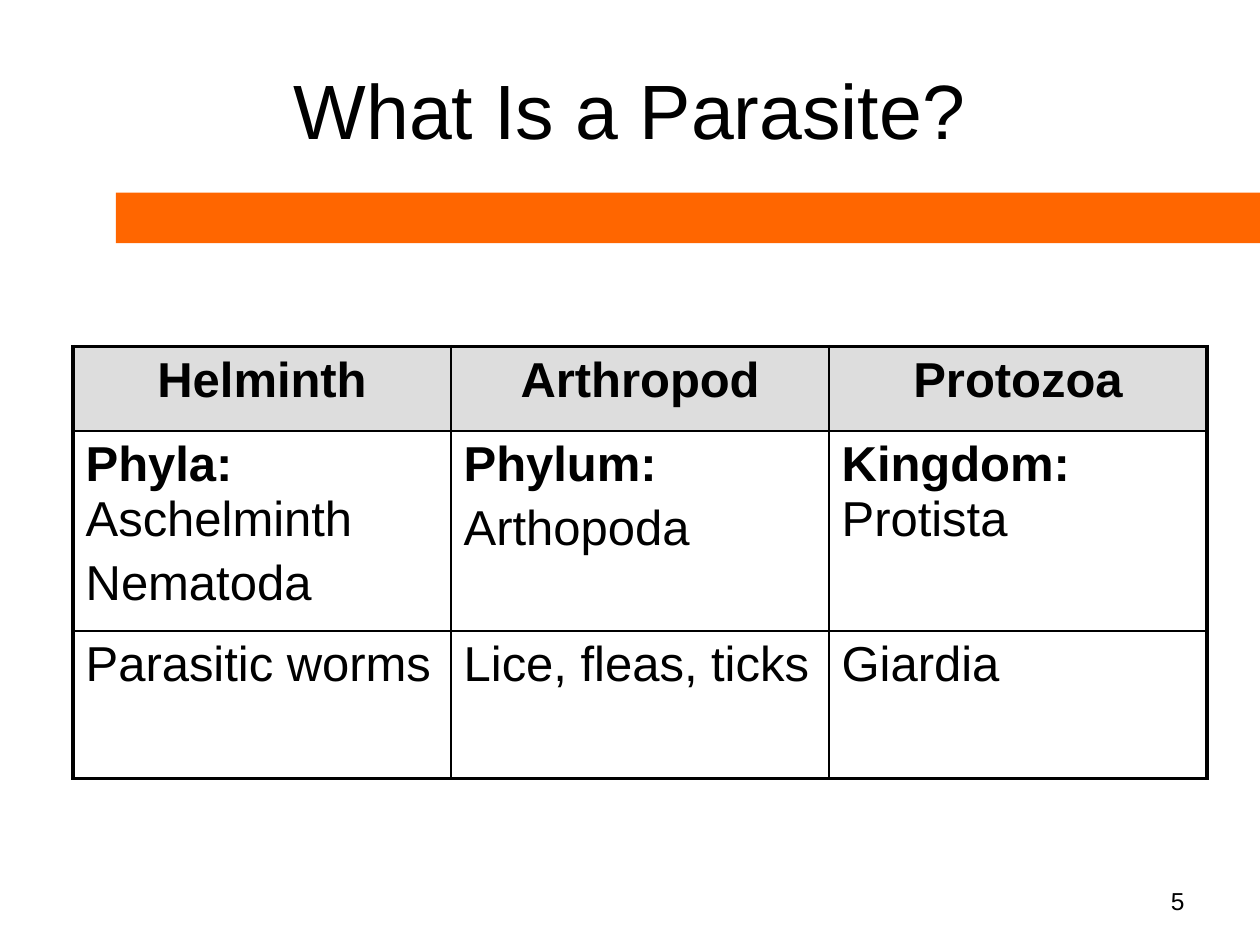
from dataclasses import dataclass

from lxml.etree import SubElement
from pptx import Presentation
from pptx.dml.color import RGBColor
from pptx.enum.shapes import MSO_SHAPE as Shape
from pptx.enum.text import MSO_ANCHOR as Anchor, PP_ALIGN as Align
from pptx.oxml.ns import qn
from pptx.util import Inches, Pt


@dataclass(frozen=True)
class Theme:
    font: str = "Arial"
    ink: str = "000000"
    accent: str = "FF6600"
    header_fill: str = "DDDDDD"
    title_size: int = 44
    table_size: int = 28
    number_size: int = 14
    outer_line: float = 2.25
    inner_line: float = 1


THEME = Theme()
COLUMN_WIDTH = 3
ROW_HEIGHTS = [0.67, 1.59, 1.17]

# Each cell is a list of paragraphs; each paragraph is a list of (text, bold) runs.
ROWS = [
    [[[(name, True)]] for name in ("Helminth", "Arthropod", "Protozoa")],
    [
        [[("Phyla:", True), (" Aschelminth", False)], [("Nematoda", False)]],
        [[("Phylum:", True)], [("Arthopoda", False)]],
        [[("Kingdom:", True), (" Protista", False)]],
    ],
    [[[(text, False)]] for text in ("Parasitic worms", "Lice, fleas, ticks", "Giardia")],
]


def style_font(font, size):
    font.name = THEME.font
    font.size = Pt(size)
    font.color.rgb = RGBColor.from_string(THEME.ink)


def add_text(page, text, left, top, width, height, size, align):
    box = page.shapes.add_textbox(Inches(left), Inches(top), Inches(width), Inches(height))
    frame = box.text_frame
    frame.word_wrap = True
    frame.vertical_anchor = Anchor.MIDDLE
    para = frame.paragraphs[0]
    para.text = text
    para.alignment = align
    style_font(para.font, size)


def add_bar(page, left, top, width, height):
    bar = page.shapes.add_shape(
        Shape.RECTANGLE, Inches(left), Inches(top), Inches(width), Inches(height))
    bar.shadow.inherit = False
    bar.fill.solid()
    bar.fill.fore_color.rgb = RGBColor.from_string(THEME.accent)
    bar.line.fill.background()


def set_borders(cell, outer_sides):
    """Draw all four borders, heavier on the sides at the table's edge."""
    props = cell._tc.get_or_add_tcPr()
    for index, side in enumerate(("L", "R", "T", "B")):
        width = THEME.outer_line if side in outer_sides else THEME.inner_line
        line = SubElement(props, qn(f"a:ln{side}"), w=str(Pt(width)))
        fill = SubElement(line, qn("a:solidFill"))
        SubElement(fill, qn("a:srgbClr"), val=THEME.ink)
        props.remove(line)
        props.insert(index, line)


def fill_cell(cell, paragraphs, is_header):
    if is_header:
        cell.fill.solid()
        cell.fill.fore_color.rgb = RGBColor.from_string(THEME.header_fill)
    else:
        cell.fill.background()
    frame = cell.text_frame
    for index, runs in enumerate(paragraphs):
        para = frame.add_paragraph() if index else frame.paragraphs[0]
        para.alignment = Align.CENTER if is_header else Align.LEFT
        if index:
            para.space_before = Pt(0.2 * THEME.table_size)
        style_font(para.font, THEME.table_size)
        for text, bold in runs:
            span = para.add_run()
            span.text = text
            span.font.bold = bold


def add_parasite_table(page, left, top):
    row_count, column_count = len(ROWS), len(ROWS[0])
    table = page.shapes.add_table(
        row_count, column_count, Inches(left), Inches(top),
        Inches(COLUMN_WIDTH * column_count), Inches(sum(ROW_HEIGHTS))).table
    table.first_row = False
    table.horz_banding = False
    for column in table.columns:
        column.width = Inches(COLUMN_WIDTH)
    for row, height in zip(table.rows, ROW_HEIGHTS):
        row.height = Inches(height)
    for r, row in enumerate(ROWS):
        for c, paragraphs in enumerate(row):
            cell = table.cell(r, c)
            fill_cell(cell, paragraphs, is_header=r == 0)
            at_edge = {"L": c == 0, "R": c == column_count - 1,
                       "T": r == 0, "B": r == row_count - 1}
            set_borders(cell, [side for side, outer in at_edge.items() if outer])


def main():
    deck = Presentation()
    deck.slide_width, deck.slide_height = Inches(10), Inches(7.5)
    page = deck.slides.add_slide(deck.slide_layouts[6])
    add_bar(page, 0.92, 1.53, 9.08, 0.4)
    add_text(page, "5", 7.17, 6.95, 2.33, 0.4, THEME.number_size, Align.RIGHT)
    add_text(page, "What Is a Parasite?", 0.5, 0.3, 9, 1.12, THEME.title_size, Align.CENTER)
    add_parasite_table(page, 0.58, 2.75)
    deck.save("out.pptx")


if __name__ == "__main__":
    main()
